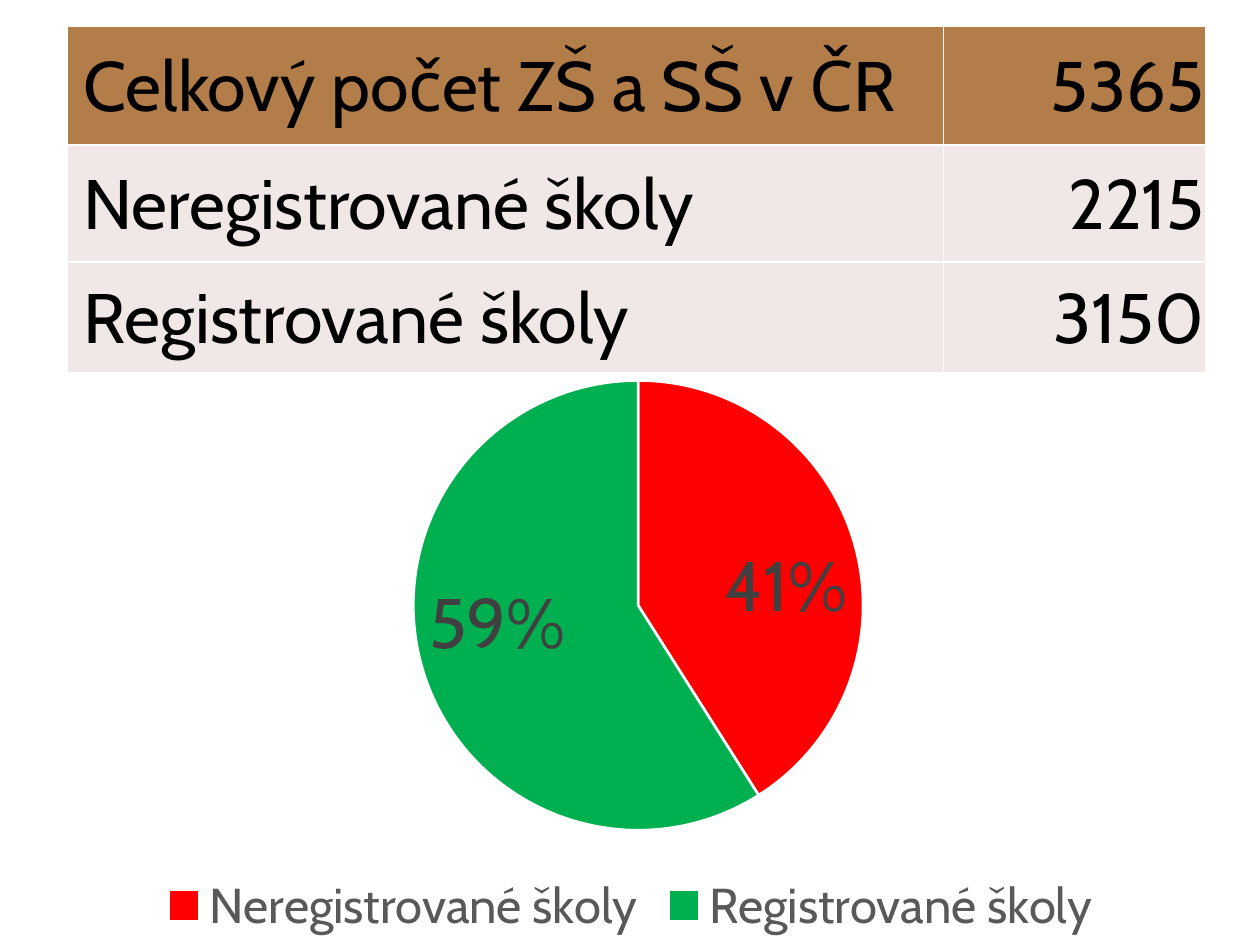
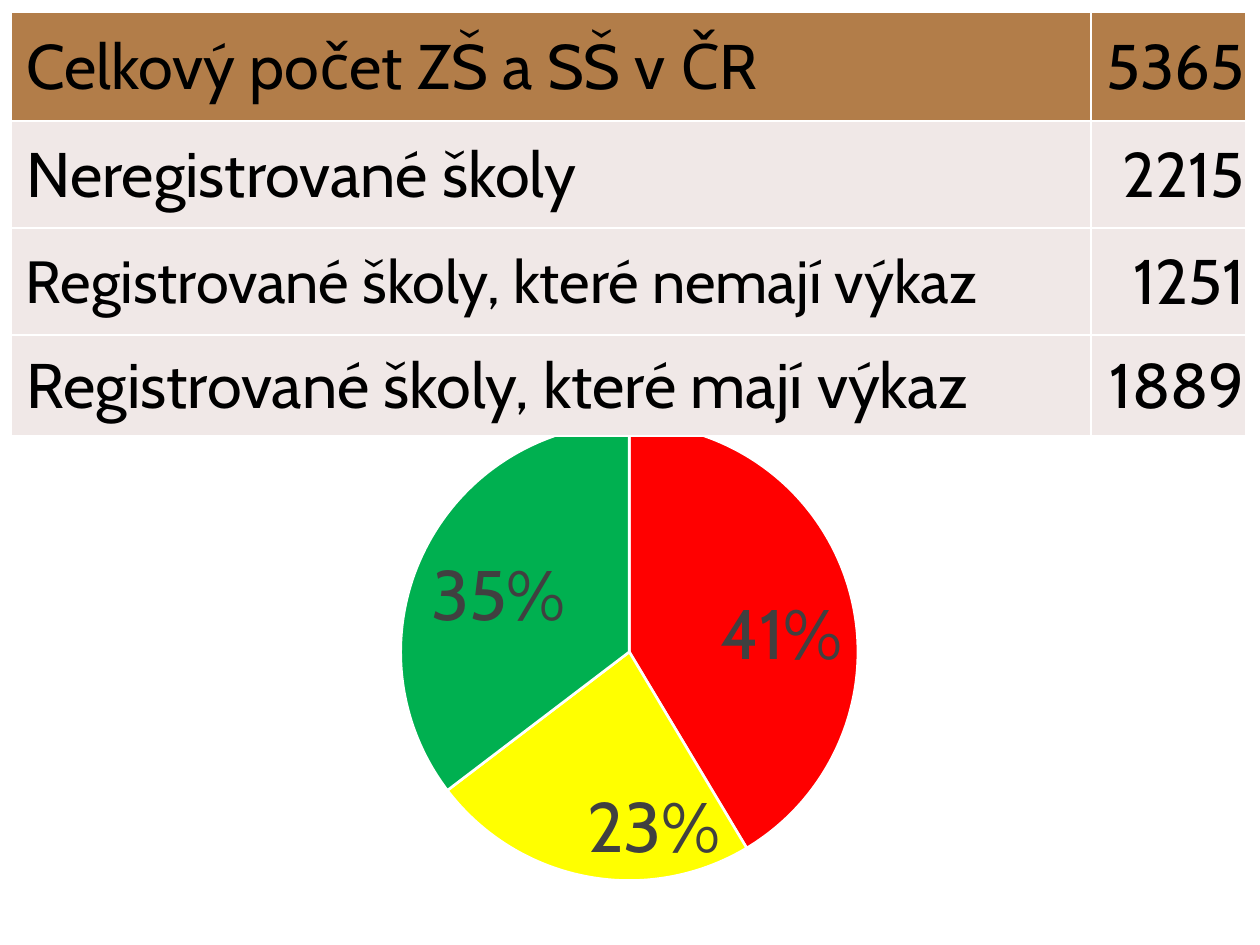
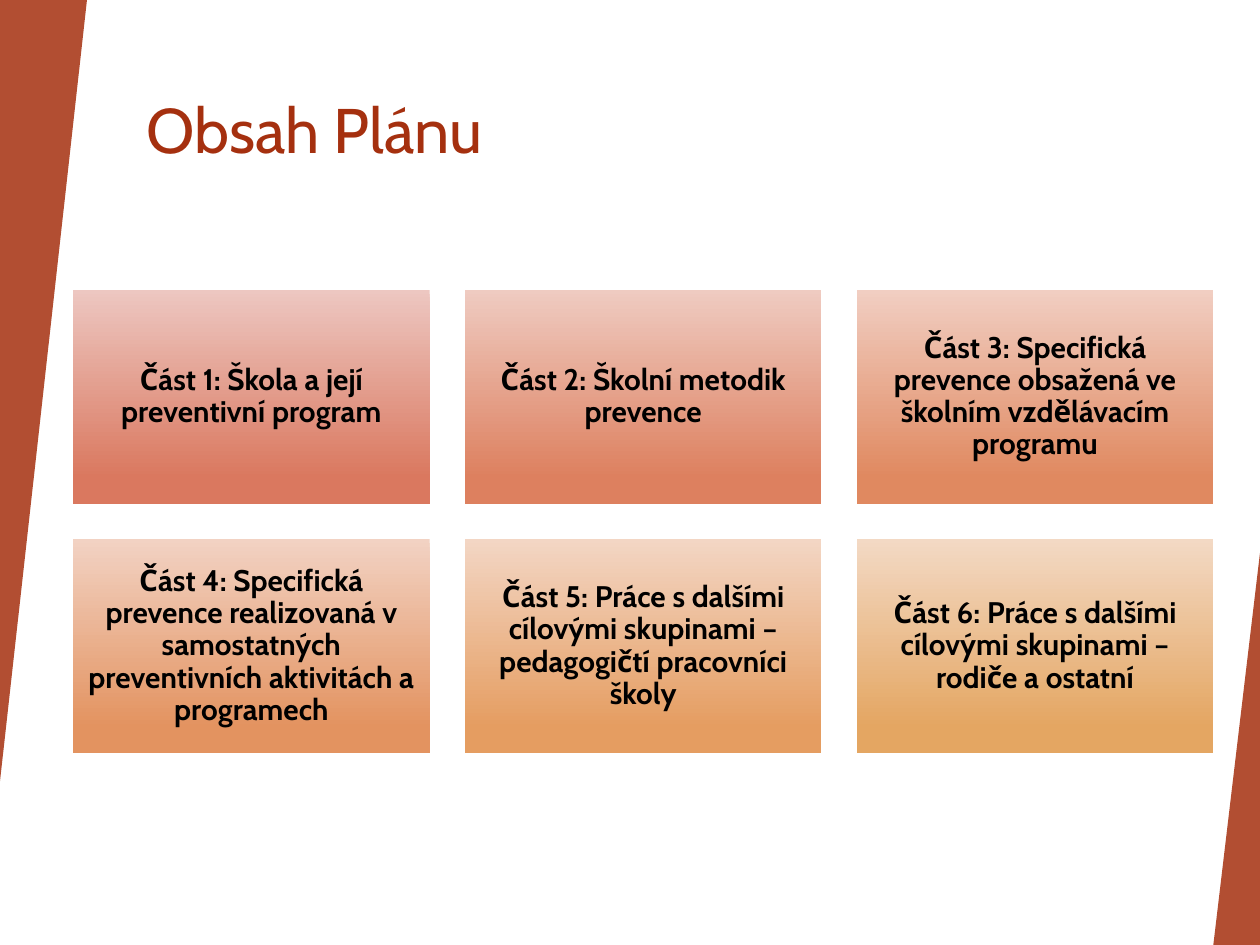
"""Build three slides on school registration and the contents of the prevention plan."""
from pptx import Presentation
from pptx.chart.data import CategoryChartData
from pptx.dml.color import RGBColor
from pptx.enum.chart import XL_CHART_TYPE, XL_LABEL_POSITION, XL_LEGEND_POSITION
from pptx.enum.shapes import MSO_SHAPE
from pptx.enum.text import MSO_ANCHOR, PP_ALIGN
from pptx.oxml import parse_xml
from pptx.oxml.ns import nsdecls, qn
from pptx.util import Inches, Pt

FONT = "Cabin"
COLORS = {
    "black": "000000", "white": "FFFFFF", "label": "404040", "legend": "595959",
    "header": "B27D49", "row": "F0E8E7", "accent": "A5300F",
    "red": "FF0000", "yellow": "FFFF00", "green": "00B050",
}
STATISTICS = [
    {
        "rows": [(" Celkový počet ZŠ a SŠ v ČR", "5365", 40),
                 (" Neregistrované školy", "2215", 40),
                 (" Registrované školy", "3150", 40)],
        "table": (0.53, 0.21), "columns": (6.96, 2.08), "heights": (0.94, 0.93, 0.88),
        "chart": (0.44, 2.81, 9.13, 4.69), "pie": (3.28, 3.02, 3.57), "legend": True,
        "slices": [("Neregistrované školy", 41, "red"), ("Registrované školy", 59, "green")],
    },
    {
        "rows": [(" Celkový počet ZŠ a SŠ v ČR", "5365", 36),
                 (" Neregistrované školy", "2215", 36),
                 (" Registrované školy, které nemají výkaz", "1251", 34),
                 (" Registrované školy, které mají výkaz", "1889", 36)],
        "table": (0.09, 0.1), "columns": (8.57, 1.23), "heights": (0.86, 0.85, 0.85, 0.8),
        "chart": (0, 3.09, 10, 4.76), "pie": (3.18, 3.36, 3.63), "legend": False,
        "slices": [("1", 41, "red"), ("2", 23, "yellow"), ("3", 35, "green")],
    },
]
PLAN_TITLE = "Obsah Plánu"
PLAN_PARTS = [
    ("Část 1: Škola a její preventivní program", "EDC7C1", "DA785F"),
    ("Část 2: Školní metodik prevence", "EFCBC1", "DD805F"),
    ("Část 3: Specifická prevence obsažená ve školním vzdělávacím programu", "F1CEC2", "E08960"),
    ("Část 4: Specifická prevence realizovaná v samostatných preventivních aktivitách a programech",
     "F2D2C3", "E39360"),
    ("Část 5: Práce s dalšími cílovými skupinami – pedagogičtí pracovníci školy", "F3D6C4", "E59D61"),
    ("Část 6: Práce s dalšími cílovými skupinami – rodiče a ostatní", "F3D9C4", "E4A662"),
]
SIDE_TRIANGLES = [((0, 0, 0.69, 6.2), 180), ((9.63, 4.39, 0.37, 3.11), 0)]
CARD_LEFT, CARD_TOP, CARD_WIDTH, CARD_HEIGHT, CARD_GAP = 0.58, 2.3, 2.83, 1.7, 0.28


def color(name):
    return RGBColor.from_string(COLORS.get(name, name))


def style_font(font, size, name="black", bold=False):
    font.name, font.size, font.bold = FONT, Pt(size), bold
    font.color.rgb = color(name)


def set_margins(holder, left, top, right, bottom):
    holder.margin_left, holder.margin_top = Inches(left), Inches(top)
    holder.margin_right, holder.margin_bottom = Inches(right), Inches(bottom)


def add_shape(page, kind, bounds):
    shape = page.shapes.add_shape(kind, *map(Inches, bounds))
    shape.shadow.inherit = False
    shape.line.fill.background()
    return shape


def fill_cell(cell, text, size, fill, alignment):
    properties = cell._tc.get_or_add_tcPr()
    for side in ("lnL", "lnR", "lnT", "lnB"):
        properties.append(parse_xml(
            f'<a:{side} {nsdecls("a")} w="12700"><a:solidFill>'
            f'<a:srgbClr val="{COLORS["white"]}"/></a:solidFill></a:{side}>'))
    cell.fill.solid()
    cell.fill.fore_color.rgb = color(fill)
    cell.vertical_anchor = MSO_ANCHOR.MIDDLE
    set_margins(cell, 0.01, 0.01, 0.01, 0)
    para = cell.text_frame.paragraphs[0]
    para.text, para.alignment = text, alignment
    style_font(para.runs[0].font, size)


def add_school_table(page, item):
    columns, heights = item["columns"], item["heights"]
    frame = page.shapes.add_table(
        len(heights), len(columns),
        *map(Inches, (*item["table"], sum(columns), sum(heights))))
    table = frame.table
    table.first_row = table.horz_banding = False
    for column, width in zip(table.columns, columns):
        column.width = Inches(width)
    base_size = item["rows"][0][2]
    for index, (label, count, size) in enumerate(item["rows"]):
        table.rows[index].height = Inches(heights[index])
        fill = "row" if index else "header"
        fill_cell(table.cell(index, 0), label, size, fill, PP_ALIGN.LEFT)
        fill_cell(table.cell(index, 1), count, base_size, fill, PP_ALIGN.RIGHT)


def place_pie(chart, bounds, pie):
    left, top, width, height = bounds
    pie_left, pie_top, diameter = pie
    parts = {"x": (pie_left - left) / width, "y": (pie_top - top) / height,
             "w": diameter / width, "h": diameter / height}
    values = "".join(f'<c:{key} val="{value:.4f}"/>' for key, value in parts.items())
    plot_area = chart.element.find(".//" + qn("c:plotArea"))
    for layout in plot_area.findall(qn("c:layout")):
        plot_area.remove(layout)
    plot_area.insert(0, parse_xml(
        f'<c:layout {nsdecls("c")}><c:manualLayout><c:layoutTarget val="inner"/>'
        f'<c:xMode val="edge"/><c:yMode val="edge"/>{values}</c:manualLayout></c:layout>'))


def add_school_pie(page, item):
    data = CategoryChartData()
    data.categories = [name for name, _, _ in item["slices"]]
    data.add_series("Series 1", [value for _, value, _ in item["slices"]])
    chart = page.shapes.add_chart(
        XL_CHART_TYPE.PIE, *map(Inches, item["chart"]), data).chart
    style_font(chart.font, 10)
    chart.has_title = False
    chart.has_legend = item["legend"]
    if item["legend"]:
        chart.legend.position = XL_LEGEND_POSITION.BOTTOM
        chart.legend.include_in_layout = False
        style_font(chart.legend.font, 28, "legend")
    plot = chart.plots[0]
    plot.vary_by_categories = True
    for index, (_, _, name) in enumerate(item["slices"]):
        part = plot.series[0].points[index].format
        part.fill.solid()
        part.fill.fore_color.rgb = color(name)
        part.line.color.rgb = color("white")
        part.line.width = Pt(1.5)
    labels = plot.series[0].data_labels
    labels.show_percentage, labels.show_value = True, False
    labels.number_format, labels.number_format_is_linked = "0%", False
    labels.position = XL_LABEL_POSITION.INSIDE_END
    style_font(labels.font, 40, "label")
    place_pie(chart, item["chart"], item["pie"])


def add_side_triangle(page, bounds, rotation):
    triangle = add_shape(page, MSO_SHAPE.ISOSCELES_TRIANGLE, bounds)
    triangle.adjustments[0] = 1
    triangle.rotation = rotation
    triangle.fill.solid()
    triangle.fill.fore_color.rgb = color("accent")
    fill_color = triangle.element.spPr.find(".//" + qn("a:srgbClr"))
    fill_color.append(parse_xml(f'<a:alpha {nsdecls("a")} val="85000"/>'))


def add_plan_card(page, index, text, top_color, bottom_color):
    row, column = divmod(index, 3)
    card = add_shape(page, MSO_SHAPE.RECTANGLE, (
        CARD_LEFT + column * (CARD_WIDTH + CARD_GAP),
        CARD_TOP + row * (CARD_HEIGHT + CARD_GAP), CARD_WIDTH, CARD_HEIGHT))
    card.fill.gradient()
    card.fill.gradient_angle = 270
    stops = zip(card.fill.gradient_stops, (0, 0.88), (top_color, bottom_color))
    for stop, position, name in stops:
        stop.position = position
        stop.color.rgb = color(name)
    frame = card.text_frame
    frame.word_wrap, frame.vertical_anchor = True, MSO_ANCHOR.MIDDLE
    set_margins(frame, 0.07, 0.07, 0.07, 0.07)
    para = frame.paragraphs[0]
    para.text, para.alignment, para.line_spacing = text, PP_ALIGN.CENTER, 0.9
    style_font(para.runs[0].font, 17, bold=True)


def add_plan_page(deck):
    page = deck.slides.add_slide(deck.slide_layouts[5])
    title = page.shapes.title
    title.left, title.top, title.width, title.height = map(Inches, (1.06, 0.67, 8.36, 1.2))
    title.text_frame.text = PLAN_TITLE
    title.text_frame.vertical_anchor = MSO_ANCHOR.TOP
    para = title.text_frame.paragraphs[0]
    para.alignment = PP_ALIGN.LEFT
    style_font(para.runs[0].font, 36, "accent")
    for bounds, rotation in SIDE_TRIANGLES:
        add_side_triangle(page, bounds, rotation)
    for index, part in enumerate(PLAN_PARTS):
        add_plan_card(page, index, *part)


def main():
    deck = Presentation()
    deck.slide_width, deck.slide_height = Inches(10), Inches(7.5)
    for item in STATISTICS:
        page = deck.slides.add_slide(deck.slide_layouts[6])
        add_school_pie(page, item)
        add_school_table(page, item)
    add_plan_page(deck)
    deck.save("out.pptx")


if __name__ == "__main__":
    main()
